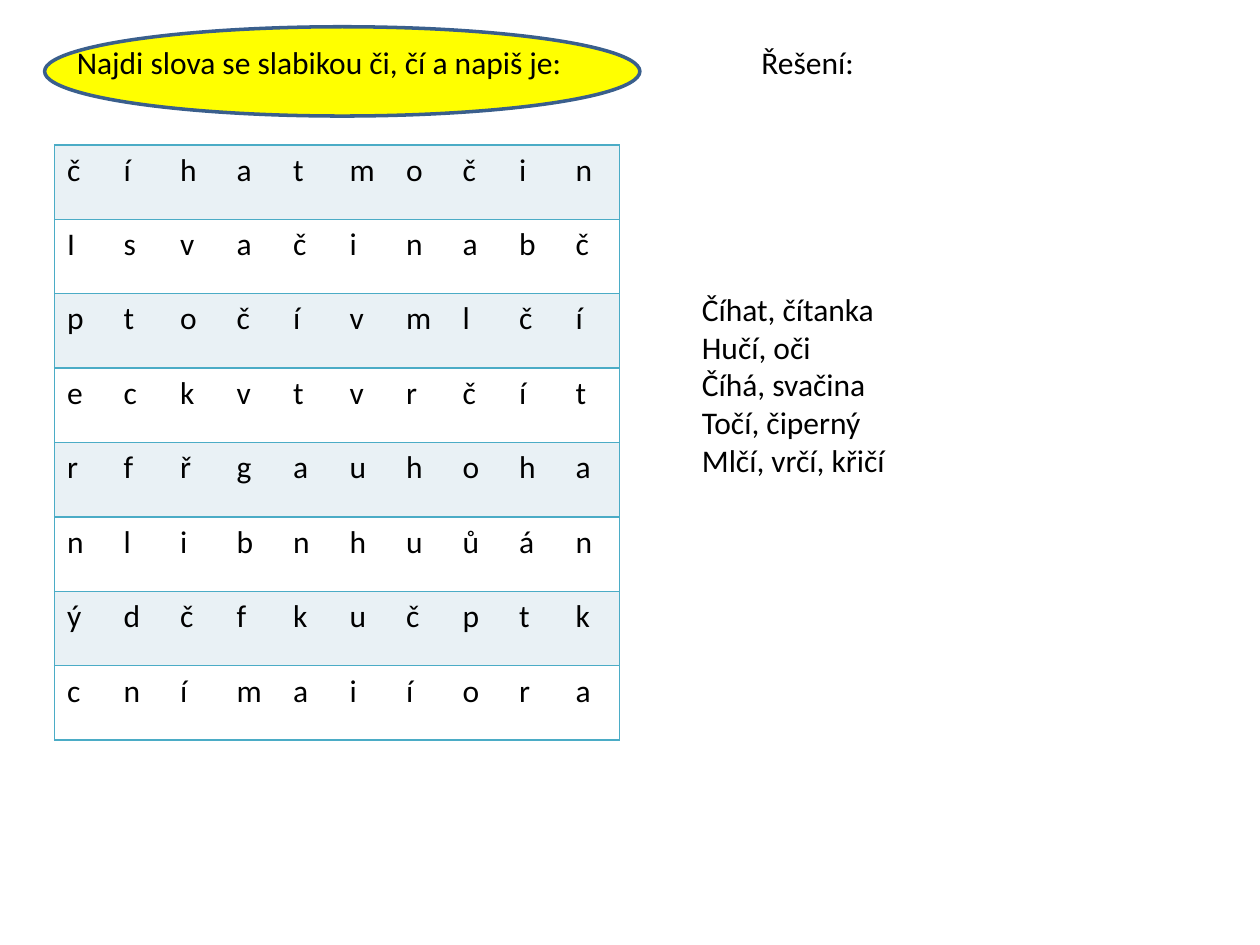
from dataclasses import dataclass

from lxml import etree
from pptx import Presentation
from pptx.dml.color import RGBColor
from pptx.enum.shapes import MSO_SHAPE
from pptx.enum.text import MSO_AUTO_SIZE
from pptx.oxml.ns import qn
from pptx.slide import Slide
from pptx.table import _Cell
from pptx.text.text import _Paragraph
from pptx.util import Cm, Pt

OVAL = MSO_SHAPE.OVAL
GROW = MSO_AUTO_SIZE.SHAPE_TO_FIT_TEXT

BLACK = RGBColor(0x00, 0x00, 0x00)
WHITE = RGBColor(0xFF, 0xFF, 0xFF)
YELLOW = RGBColor(0xFF, 0xFF, 0x00)
NAVY = RGBColor(0x3A, 0x5F, 0x8C)
TEAL = RGBColor(0x4B, 0xAC, 0xC6)
PALE = RGBColor(0xE9, 0xF1, 0xF5)

FONT = "Calibri"
SIZE = Pt(18)
COL = Cm(1.14)
ROW = Cm(1.5)

LETTERS = [
    "číhatmočin",
    "Isvačinabč",
    "ptočívmlčí",
    "eckvtvrčít",
    "rfřgauhoha",
    "nlibnhuůán",
    "ýdčfkučptk",
    "cnímaiíora",
]


@dataclass
class Note:
    left: float
    top: float
    width: float
    height: float
    lines: list[str]


NOTES = [
    Note(1.3, 0.74, 11.8, 1.02, ["Najdi slova se slabikou či, čí a napiš je:"]),
    Note(13.9, 5.72, 8.8, 4.11, [
        "Číhat, čítanka",
        "Hučí, oči",
        "Číhá, svačina",
        "Točí, čiperný",
        "Mlčí, vrčí, křičí",
    ]),
    Note(15.1, 0.74, 4.6, 1.02, ["Řešení:"]),
]


def add_run(para: _Paragraph, text: str) -> None:
    run = para.add_run()
    run.text = text
    run.font.name = FONT
    run.font.size = SIZE
    run.font.color.rgb = BLACK


def add_note(slide: Slide, note: Note) -> None:
    box = slide.shapes.add_textbox(
        Cm(note.left), Cm(note.top), Cm(note.width), Cm(note.height))
    frame = box.text_frame
    frame.word_wrap = True
    frame.auto_size = GROW
    for i, line in enumerate(note.lines):
        para = frame.add_paragraph() if i else frame.paragraphs[0]
        add_run(para, line)


def add_edge(cell: _Cell, side: str, shown: bool) -> None:
    props = cell._tc.get_or_add_tcPr()
    edge = etree.SubElement(props, qn(f"a:ln{side}"), w=str(Pt(1)))
    if shown:
        fill = etree.SubElement(edge, qn("a:solidFill"))
        etree.SubElement(fill, qn("a:srgbClr"), val=str(TEAL))
    else:
        etree.SubElement(edge, qn("a:noFill"))


def add_grid(slide: Slide) -> None:
    rows, cols = len(LETTERS), len(LETTERS[0])
    table = slide.shapes.add_table(
        rows, cols, Cm(1.1), Cm(2.92), COL * cols, ROW * rows).table
    table.first_row = False
    for col in table.columns:
        col.width = COL
    for r, word in enumerate(LETTERS):
        table.rows[r].height = ROW
        for c, letter in enumerate(word):
            cell = table.cell(r, c)
            add_run(cell.text_frame.paragraphs[0], letter)
            # Only the outer sides carry upright lines
            add_edge(cell, "L", c == 0)
            add_edge(cell, "R", c == cols - 1)
            add_edge(cell, "T", True)
            add_edge(cell, "B", True)
            cell.fill.solid()
            cell.fill.fore_color.rgb = WHITE if r % 2 else PALE


def main() -> None:
    deck = Presentation()
    deck.slide_width = Cm(25.4)
    deck.slide_height = Cm(19.05)
    slide = deck.slides.add_slide(deck.slide_layouts[6])

    # Oval behind the task
    oval = slide.shapes.add_shape(OVAL, Cm(0.9), Cm(0.54), Cm(12), Cm(1.8))
    oval.shadow.inherit = False
    oval.fill.solid()
    oval.fill.fore_color.rgb = YELLOW
    oval.line.color.rgb = NAVY
    oval.line.width = Pt(2)

    # Letter grid
    add_grid(slide)

    # Task, answers and their heading
    for note in NOTES:
        add_note(slide, note)

    deck.save("out.pptx")


if __name__ == "__main__":
    main()
